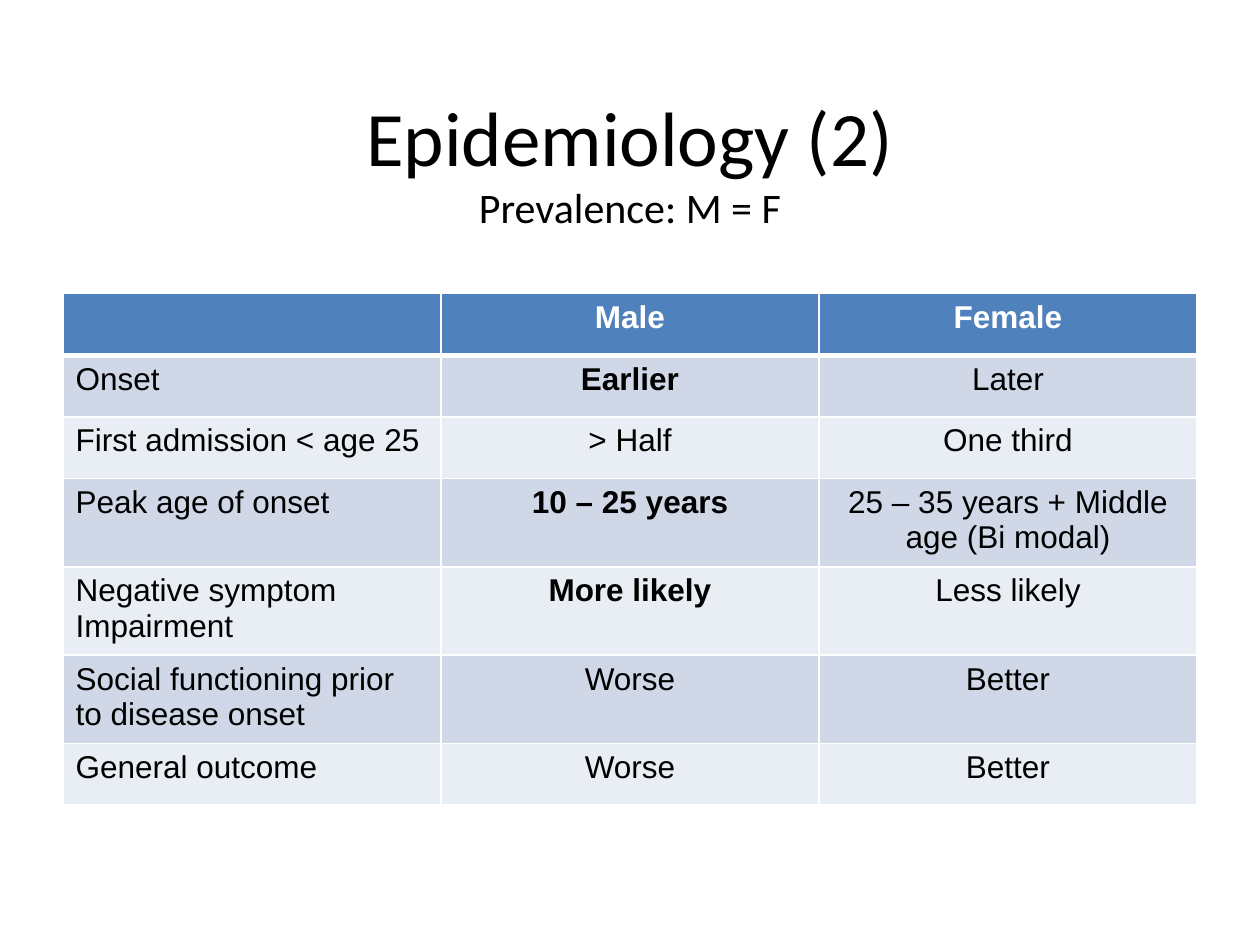
from dataclasses import dataclass

import pptx
import pptx.dml.color
import pptx.enum.text
import pptx.oxml
import pptx.oxml.ns
import pptx.util
from pptx.util import Inches

ALIGN = pptx.enum.text.PP_ALIGN


@dataclass(frozen=True)
class Theme:
    ink: str = "000000"
    paper: str = "FFFFFF"
    header: str = "4F81BD"
    bands: tuple = ("D0D8E8", "E9EDF4")
    title_font: str = "Calibri"
    table_font: str = "Arial"
    title_size: int = 44
    subtitle_size: int = 24
    table_size: int = 18
    rule: int = 1
    header_rule: int = 3


THEME = Theme()
HEADINGS = ("", "Male", "Female")
COMPARISON = (
    ("Onset", "Earlier", "Later"),
    ("First admission < age 25", "> Half", "One third"),
    ("Peak age of onset", "10 – 25 years", "25 – 35 years + Middle age (Bi modal)"),
    ("Negative symptom Impairment", "More likely", "Less likely"),
    ("Social functioning prior to disease onset", "Worse", "Better"),
    ("General outcome", "Worse", "Better"),
)
EMPHASIS = {"Male", "Female", "Earlier", "10 – 25 years", "More likely"}
SINGLE_LINE, DOUBLE_LINE = Inches(0.49), Inches(0.7)
ROW_HEIGHTS = (SINGLE_LINE,) * 3 + (DOUBLE_LINE,) * 3 + (SINGLE_LINE,)


def rgb(colour):
    return pptx.dml.color.RGBColor.from_string(colour)


def add_run(paragraph, words, font, size, colour, bold=False):
    run = paragraph.add_run()
    run.text = words
    run.font.name = font
    run.font.size = pptx.util.Pt(size)
    run.font.color.rgb = rgb(colour)
    run.font.bold = bold


def add_borders(cell, bottom_width, top_width):
    properties = cell._tc.get_or_add_tcPr()
    widths = {"L": THEME.rule, "R": THEME.rule, "T": top_width, "B": bottom_width}
    for position, (side, width) in enumerate(widths.items()):
        border = pptx.oxml.parse_xml(
            f'<a:ln{side} {pptx.oxml.ns.nsdecls("a")} w="{pptx.util.Pt(width)}">'
            f'<a:solidFill><a:srgbClr val="{THEME.paper}"/></a:solidFill></a:ln{side}>'
        )
        properties.insert(position, border)


def add_title(slide, left, top, width, height):
    frame = slide.shapes.add_textbox(left, top, width, height).text_frame
    frame.word_wrap = True
    frame.vertical_anchor = pptx.enum.text.MSO_ANCHOR.MIDDLE
    heading = frame.paragraphs[0]
    heading.alignment = ALIGN.CENTER
    add_run(heading, "Epidemiology (2)", THEME.title_font, THEME.title_size, THEME.ink)
    heading.add_line_break()
    add_run(heading, "Prevalence: M = F", THEME.title_font, THEME.subtitle_size, THEME.ink)


def fill_cell(cell, words, row, column):
    is_header = row == 0
    cell.fill.solid()
    cell.fill.fore_color.rgb = rgb(THEME.header if is_header else THEME.bands[(row - 1) % 2])
    add_borders(
        cell,
        bottom_width=THEME.header_rule if is_header else THEME.rule,
        top_width=THEME.header_rule if row == 1 else THEME.rule,
    )
    paragraph = cell.text_frame.paragraphs[0]
    paragraph.alignment = ALIGN.CENTER if column else ALIGN.LEFT
    if words:
        colour = THEME.paper if is_header else THEME.ink
        add_run(paragraph, words, THEME.table_font, THEME.table_size, colour, words in EMPHASIS)


def add_comparison(slide, left, top, width):
    rows = (HEADINGS, *COMPARISON)
    table = slide.shapes.add_table(
        len(rows), len(HEADINGS), left, top, width, sum(ROW_HEIGHTS)
    ).table
    for row, (entries, height) in enumerate(zip(rows, ROW_HEIGHTS)):
        table.rows[row].height = height
        for column, words in enumerate(entries):
            fill_cell(table.cell(row, column), words, row, column)


def main():
    deck = pptx.Presentation()
    deck.slide_width, deck.slide_height = Inches(10), Inches(7.5)
    slide = deck.slides.add_slide(deck.slide_layouts[6])
    add_title(slide, Inches(0.5), Inches(0.3), Inches(9), Inches(1.95))
    add_comparison(slide, Inches(0.5), Inches(2.33), Inches(9))
    deck.save("out.pptx")


if __name__ == "__main__":
    main()
